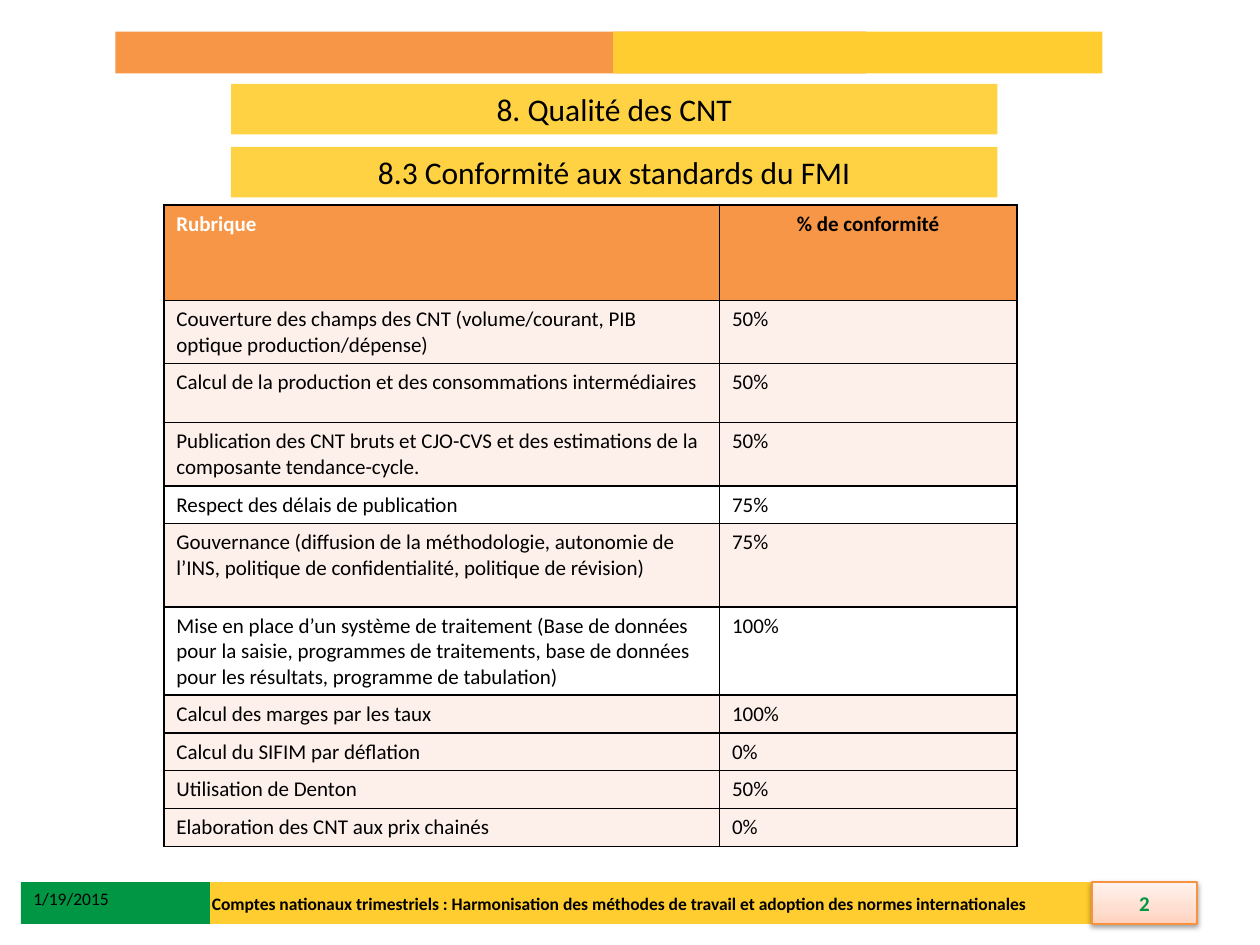
import pptx
import pptx.util
import pptx.oxml
import pptx.oxml.ns
import pptx.dml.color
import pptx.enum.shapes
import pptx.enum.text

COLORS = {
    "orange": "F79646", "yellow": "FFCD2F", "heading": "FFD243",
    "green": "009644", "tint": "FDEFE9", "white": "FFFFFF",
    "black": "000000", "badge_line": "F69240",
}
UNIT = pptx.util.Inches(1) / 12  # grid of 120 columns by 90 rows
ALIGN = pptx.enum.text.PP_ALIGN
ANCHOR = pptx.enum.text.MSO_ANCHOR
NAMESPACE = pptx.oxml.ns.nsdecls("a")


def place(shape, column, row, columns, rows, fill=None):
    shape.left, shape.top = round(column * UNIT), round(row * UNIT)
    shape.width, shape.height = round(columns * UNIT), round(rows * UNIT)
    if fill:
        shape.fill.solid()
        shape.fill.fore_color.rgb = pptx.dml.color.RGBColor.from_string(COLORS[fill])
        shape.line.fill.background()


def write(holder, text, size, color="black", bold=False,
          align=ALIGN.LEFT, anchor=ANCHOR.TOP):
    frame = holder.text_frame
    frame.word_wrap = True
    frame.vertical_anchor = anchor
    para = frame.paragraphs[0]
    para.text = text
    para.alignment = align
    para.font.name = "Calibri"
    para.font.size = pptx.util.Pt(size)
    para.font.bold = bold
    para.font.color.rgb = pptx.dml.color.RGBColor.from_string(COLORS[color])


deck = pptx.Presentation()
deck.slide_width = pptx.util.Inches(10)
deck.slide_height = pptx.util.Inches(7.5)
page = deck.slides.add_slide(deck.slide_layouts[5])

# Top and bottom bands; the last one carries the page number
bands = [
    (19, 84, 95, 4, "yellow"),
    (11, 3, 71.5, 4, "orange"),
    (58.4, 3, 46.6, 4, "yellow"),
    (2, 84, 18, 4, "green"),
    (104, 84, 10, 4, "tint"),
]
for band in bands:
    box = page.shapes.add_shape(pptx.enum.shapes.MSO_SHAPE.RECTANGLE, 0, 0, 0, 0)
    box.shadow.inherit = False
    place(box, *band)

# Page number badge: gradient fill, thin border and soft shadow
write(box, "2", 12, "green", True, ALIGN.CENTER, ANCHOR.MIDDLE)
box.line.color.rgb = pptx.dml.color.RGBColor.from_string(COLORS["badge_line"])
box.line.width = pptx.util.Pt(0.75)
properties = box.fill._xPr
stops = "".join(
    f'<a:gs pos="{position}000"><a:srgbClr val="{color}"/></a:gs>'
    for position, color in [(0, "FFD2BD"), (35, "FFDED0"), (100, "FFF2ED")])
solid = properties.find(pptx.oxml.ns.qn("a:solidFill"))
properties.replace(solid, pptx.oxml.parse_xml(
    f'<a:gradFill {NAMESPACE} rotWithShape="1"><a:gsLst>{stops}</a:gsLst>'
    '<a:lin ang="16200000" scaled="0"/></a:gradFill>'))
effects = properties.find(pptx.oxml.ns.qn("a:effectLst"))
effects.append(pptx.oxml.parse_xml(
    f'<a:outerShdw {NAMESPACE} blurRad="{pptx.util.Pt(3.1)}" dist="{pptx.util.Pt(1.6)}" '
    'dir="5400000" rotWithShape="0"><a:srgbClr val="000000">'
    '<a:alpha val="38000"/></a:srgbClr></a:outerShdw>'))

# Footer texts
footer = page.shapes.add_textbox(0, 0, 0, 0)
place(footer, 19, 84, 81, 4)
write(footer, "Comptes nationaux trimestriels : Harmonisation des méthodes de travail "
      "et adoption des normes internationales", 10, bold=True, anchor=ANCHOR.MIDDLE)
date = page.shapes.add_textbox(0, 0, 0, 0)
place(date, 2, 84, 17, 3.2)
write(date, "1/19/2015", 10)

# Title and subtitle
subtitle = page.shapes.add_textbox(0, 0, 0, 0)
headings = [
    (page.shapes.title, 8, "8. Qualité des CNT"),
    (subtitle, 14, "8.3 Conformité aux standards du FMI"),
]
for heading, row, text in headings:
    place(heading, 22, row, 73, 4.8, "heading")
    write(heading, text, 18, align=ALIGN.CENTER)

# Conformity table: row height in inches, heading, share, fill
records = [
    (0.76, "Rubrique", "% de conformité", "orange"),
    (0.5, "Couverture des champs des CNT (volume/courant, PIB optique "
     "production/dépense)", "50%", "tint"),
    (0.47, "Calcul de la production et des consommations intermédiaires", "50%", "tint"),
    (0.5, "Publication des CNT bruts et CJO-CVS et des estimations de la "
     "composante tendance-cycle.", "50%", "tint"),
    (0.3, "Respect des délais de publication", "75%", "white"),
    (0.66, "Gouvernance (diffusion de la méthodologie, autonomie de l’INS, "
     "politique de confidentialité, politique de révision)", "75%", "tint"),
    (0.7, "Mise en place d’un système de traitement (Base de données pour la saisie, "
     "programmes de traitements, base de données pour les résultats, "
     "programme de tabulation)", "100%", "white"),
    (0.3, "Calcul des marges par les taux", "100%", "tint"),
    (0.3, "Calcul du SIFIM par déflation", "0%", "tint"),
    (0.3, "Utilisation de Denton", "50%", "tint"),
    (0.3, "Elaboration des CNT aux prix chainés", "0%", "tint"),
]
graphic = page.shapes.add_table(len(records), 2, 0, 0, 0, 0)
place(graphic, 15.6, 19.5, 81.2, 61)
table = graphic.table
for column, width in zip(table.columns, (4.41, 2.36)):
    column.width = pptx.util.Inches(width)

for index, (height, *texts, fill) in enumerate(records):
    table.rows[index].height = pptx.util.Inches(height)
    header = index == 0
    for position, text in enumerate(texts):
        cell = table.cell(index, position)
        write(cell, text, 12, "white" if header and position == 0 else "black", header,
              ALIGN.CENTER if header and position == 1 else ALIGN.LEFT,
              ANCHOR.MIDDLE if header else ANCHOR.TOP)
        # Borders come before the fill in the cell properties
        cell_properties = cell._tc.get_or_add_tcPr()
        for side in ("lnL", "lnR", "lnT", "lnB"):
            cell_properties.append(pptx.oxml.parse_xml(
                f'<a:{side} {NAMESPACE} w="{pptx.util.Pt(1)}"><a:solidFill>'
                f'<a:srgbClr val="{COLORS["black"]}"/></a:solidFill></a:{side}>'))
        cell.fill.solid()
        cell.fill.fore_color.rgb = pptx.dml.color.RGBColor.from_string(COLORS[fill])

deck.save("out.pptx")
